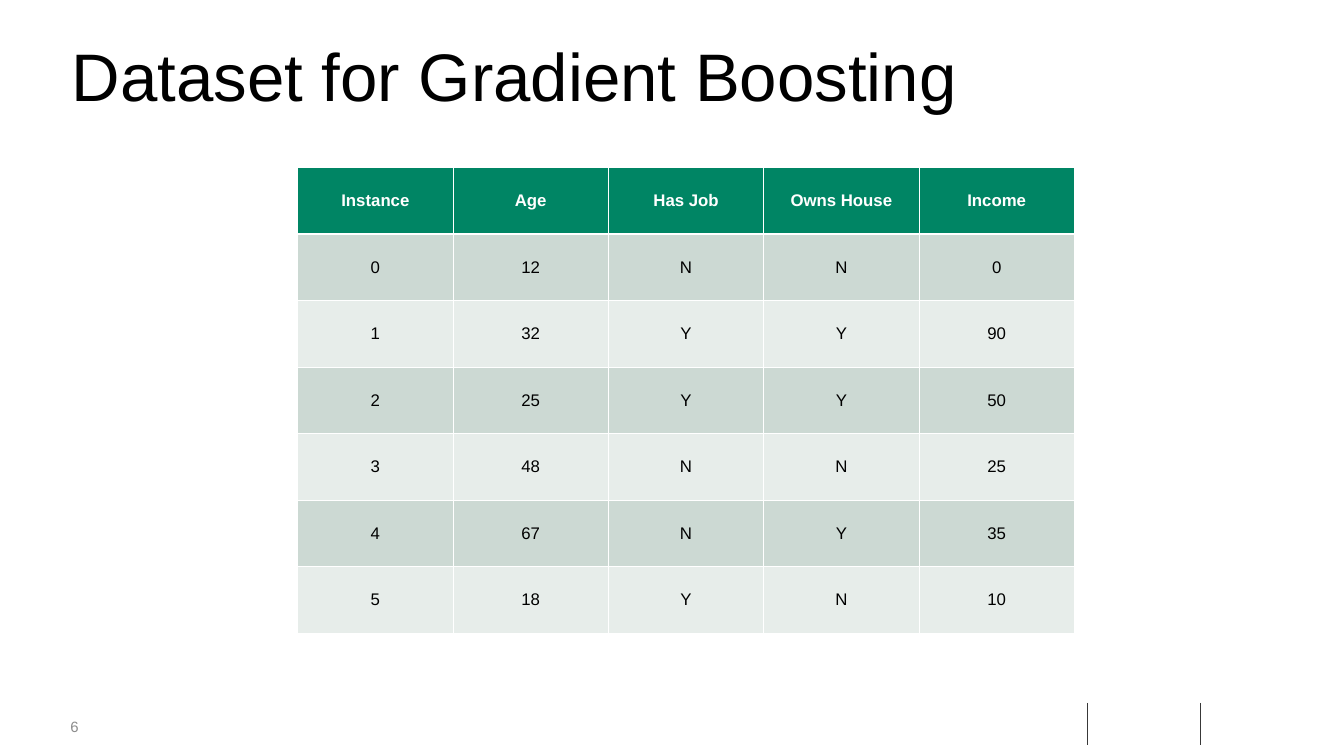
from dataclasses import dataclass

from lxml.etree import SubElement
from pptx import Presentation
from pptx.dml.color import RGBColor
from pptx.enum.shapes import MSO_CONNECTOR
from pptx.enum.text import MSO_ANCHOR, MSO_AUTO_SIZE, PP_ALIGN
from pptx.oxml.ns import qn
from pptx.util import Pt

COLORS = {
    "text": "000000",
    "white": "FFFFFF",
    "header": "008564",
    "band_dark": "CCD9D3",
    "band_light": "E7EDEA",
    "rule": "383838",
    "number": "8C8C8C",
}
HEADER_FONT = {"name": "Arial", "size": Pt(18), "bold": True}
BODY_FONT = {"name": "Arial", "size": Pt(18), "bold": False}

# Table content and grid
ROWS = [
    ("Instance", "Age", "Has Job", "Owns House", "Income"),
    ("0", "12", "N", "N", "0"),
    ("1", "32", "Y", "Y", "90"),
    ("2", "25", "Y", "Y", "50"),
    ("3", "48", "N", "N", "25"),
    ("4", "67", "N", "Y", "35"),
    ("5", "18", "Y", "N", "10"),
]
TABLE_LEFT, TABLE_TOP = 319, 179.5
COL_WIDTH, ROW_HEIGHT = 166.45, 71.25


@dataclass
class Label:
    text: str
    left: float
    top: float
    width: float
    height: float
    color: str
    font: dict
    frame: dict
    paragraph: dict


@dataclass
class Rule:
    x: float
    top: float = 753
    bottom: float = 798.5


LABELS = [
    Label("Dataset for Gradient Boosting", 70, 43, 1259, 132, "text",
          {"name": "Arial", "size": Pt(72)}, {}, {"line_spacing": 0.9}),
    Label("6", 75.5, 769, 42.5, 19.5, "number",
          {"name": "Arial", "size": Pt(16)},
          {"margin_left": 0, "margin_top": 0, "margin_right": 0,
           "margin_bottom": 0, "vertical_anchor": MSO_ANCHOR.MIDDLE,
           "auto_size": MSO_AUTO_SIZE.SHAPE_TO_FIT_TEXT}, {}),
]
RULES = [Rule(1165), Rule(1286)]


def rgb(name: str) -> RGBColor:
    return RGBColor.from_string(COLORS[name])


def apply(target, values: dict) -> None:
    for key, value in values.items():
        setattr(target, key, value)


def write(p, text: str, font: dict, color: str) -> None:
    r = p.add_run()
    r.text = text
    apply(r.font, font)
    r.font.color.rgb = rgb(color)


def draw_label(s, label: Label) -> None:
    sp = s.shapes.add_textbox(Pt(label.left), Pt(label.top),
                              Pt(label.width), Pt(label.height))
    tf = sp.text_frame
    apply(tf, {"word_wrap": True, **label.frame})
    p = tf.paragraphs[0]
    apply(p, label.paragraph)
    write(p, label.text, label.font, label.color)


def draw_rule(s, rule: Rule) -> None:
    line = s.shapes.add_connector(MSO_CONNECTOR.STRAIGHT, Pt(rule.x), Pt(rule.top),
                                  Pt(rule.x), Pt(rule.bottom))
    line.line.width = Pt(1)
    line.line.color.rgb = rgb("rule")
    SubElement(line._element.spPr, qn("a:effectLst"))


def set_borders(cell, widths: dict) -> None:
    tcPr = cell._tc.get_or_add_tcPr()
    for side, width in widths.items():
        ln = SubElement(tcPr, qn(f"a:ln{side}"), w=str(Pt(width)))
        fill = SubElement(ln, qn("a:solidFill"))
        SubElement(fill, qn("a:srgbClr"), val=COLORS["white"])


def draw_table(s, rows: list) -> None:
    n_rows, n_cols = len(rows), len(rows[0])
    table = s.shapes.add_table(n_rows, n_cols, Pt(TABLE_LEFT), Pt(TABLE_TOP),
                               Pt(COL_WIDTH * n_cols), Pt(ROW_HEIGHT * n_rows)).table
    for col in table.columns:
        col.width = Pt(COL_WIDTH)
    for i, values in enumerate(rows):
        table.rows[i].height = Pt(ROW_HEIGHT)
        is_header = i == 0
        band = "band_dark" if i % 2 else "band_light"
        for j, text in enumerate(values):
            cell = table.cell(i, j)
            # The line under the header is thicker than the rest
            set_borders(cell, {"L": 1, "R": 1, "T": 3 if i == 1 else 1,
                               "B": 3 if is_header else 1})
            cell.fill.solid()
            cell.fill.fore_color.rgb = rgb("header" if is_header else band)
            cell.vertical_anchor = MSO_ANCHOR.MIDDLE
            p = cell.text_frame.paragraphs[0]
            p.alignment = PP_ALIGN.CENTER
            write(p, text, HEADER_FONT if is_header else BODY_FONT,
                  "white" if is_header else "text")


def main() -> None:
    prs = Presentation()
    prs.slide_width, prs.slide_height = Pt(1440), Pt(810)
    s = prs.slides.add_slide(prs.slide_layouts[6])

    # Footer rules
    for rule in RULES:
        draw_rule(s, rule)

    # Title and slide number
    for label in LABELS:
        draw_label(s, label)

    # Dataset
    draw_table(s, ROWS)

    prs.save("out.pptx")


if __name__ == "__main__":
    main()
